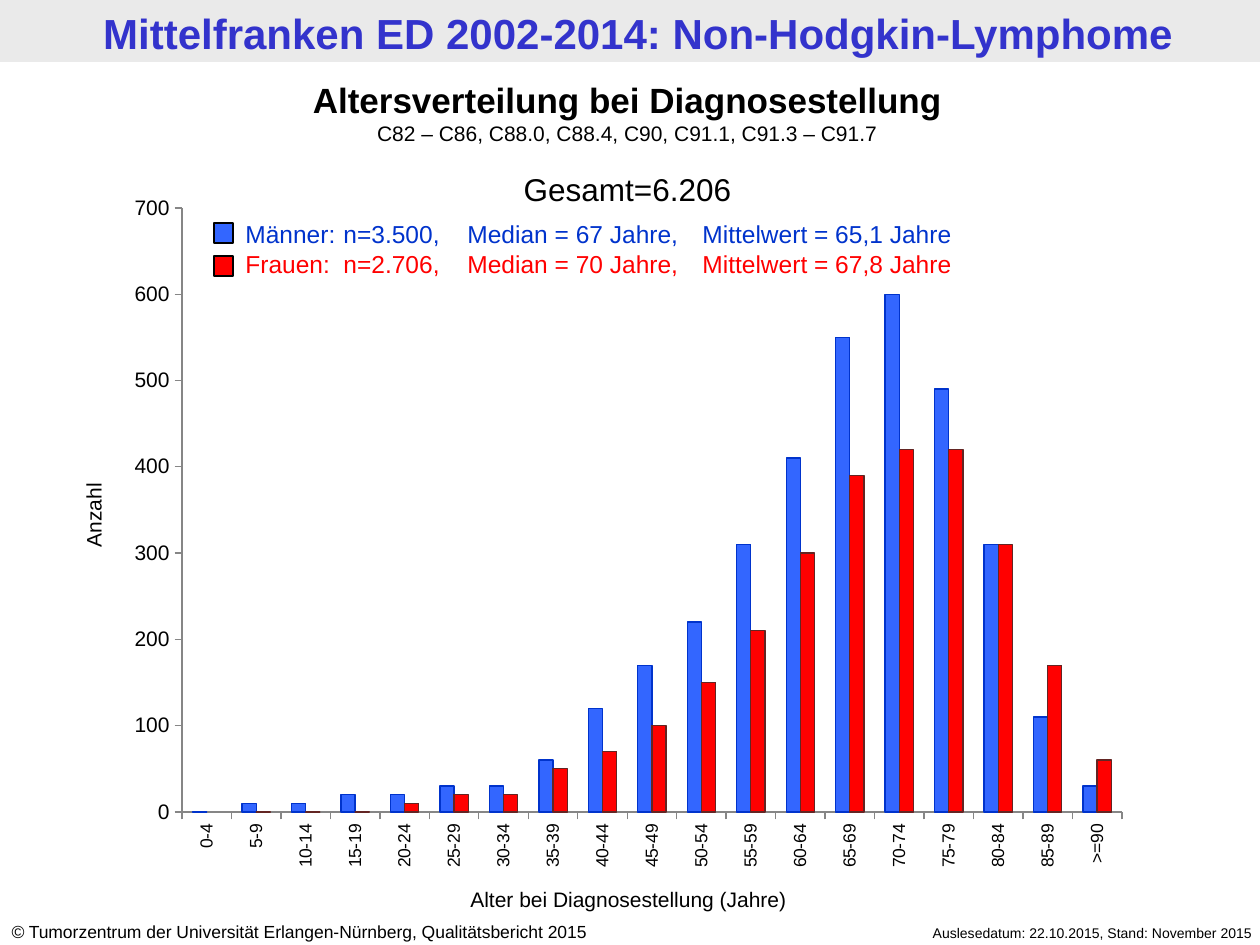
import pptx
import pptx.util
import pptx.dml.color
import pptx.chart.data
import pptx.enum.chart
import pptx.enum.shapes
import pptx.enum.text
import pptx.oxml
import pptx.oxml.ns
import lxml.etree

PX = 914400 / 126
ALIGN = pptx.enum.text.PP_ALIGN
Pt = pptx.util.Pt
qn = pptx.oxml.ns.qn


def rgb(value):
    return pptx.dml.color.RGBColor.from_string(value)


def add_text(sp, box, paras, align=ALIGN.LEFT, tabs=()):
    """Place a text shape; each paragraph is a list of (text, size, colour, bold, italic)."""
    sp.left, sp.top, sp.width, sp.height = [round(v * PX) for v in box]
    tf = sp.text_frame
    tf.word_wrap = True
    tf.auto_size = pptx.enum.text.MSO_AUTO_SIZE.NONE
    tf.vertical_anchor = pptx.enum.text.MSO_ANCHOR.TOP
    for i, runs in enumerate(paras):
        p = tf.paragraphs[0] if i == 0 else tf.add_paragraph()
        p.alignment = align
        if tabs:
            tab_list = lxml.etree.SubElement(p._p.get_or_add_pPr(), qn("a:tabLst"))
            for pos in tabs:
                lxml.etree.SubElement(tab_list, qn("a:tab"), pos=str(round(pos * PX)), algn="l")
        for text, size, colour, bold, italic in runs:
            r = p.add_run()
            r.text = text
            r.font.name = "Arial"
            r.font.size = Pt(size)
            r.font.bold = bold
            r.font.italic = italic
            r.font.color.rgb = rgb(colour)
    return tf


prs = pptx.Presentation()
prs.slide_width = round(1260 * PX)
prs.slide_height = round(945 * PX)
s = prs.slides.add_slide(prs.slide_layouts[5])
shapes = s.shapes

# Title band, moved behind the title
band = shapes.add_shape(pptx.enum.shapes.MSO_SHAPE.RECTANGLE, 0, 0, prs.slide_width, round(62 * PX))
band.shadow.inherit = False
band.fill.solid()
band.fill.fore_color.rgb = rgb("EAEAEA")
band.line.fill.background()
shapes._spTree.insert(2, band._element)

# Title
add_text(shapes.title, (8, 1, 1260, 62),
         [[("Mittelfranken ED 2002-2014: Non-Hodgkin-Lymphome", 24, "3333CC", True, False)]],
         ALIGN.CENTER)

# Footer
add_text(shapes.add_textbox(0, 0, 0, 0), (838, 918, 427, 30),
         [[("Auslesedatum: 22.10.2015, Stand: November 2015", 8, "000000", False, False)]],
         ALIGN.RIGHT)
add_text(shapes.add_textbox(0, 0, 0, 0), (-1, 915, 660, 34),
         [[("©", 10, "000000", False, True),
           (" Tumorzentrum der Universität Erlangen-Nürnberg, Qualitätsbericht 2015",
            10, "000000", False, False)]])

# Chart data: five-year age groups
data = pptx.chart.data.CategoryChartData()
data.categories = [f"{a}-{a + 4}" for a in range(0, 90, 5)] + [">=90"]
data.add_series("Männer", [0, 10, 10, 20, 20, 30, 30, 60, 120, 170, 220,
                           310, 410, 550, 600, 490, 310, 110, 30])
data.add_series("Frauen", [None, 0, 0, 0, 10, 20, 20, 50, 70, 100, 150,
                           210, 300, 390, 420, 420, 310, 170, 60])
chart = shapes.add_chart(pptx.enum.chart.XL_CHART_TYPE.COLUMN_CLUSTERED,
                         *[round(v * PX) for v in (115, 183, 1028, 699)], data).chart
chart.has_legend = False
chart.has_title = False
chart.font.name = "Calibri"
chart.font.size = Pt(18)
chart.font.color.rgb = rgb("000000")

# Columns
plot = chart.plots[0]
plot.gap_width = 150
plot.overlap = 0
plot.vary_by_categories = False
for series, fill, line in zip(plot.series, ("3366FF", "FF0000"), ("0033CC", "632523")):
    series.format.fill.solid()
    series.format.fill.fore_color.rgb = rgb(fill)
    series.format.line.color.rgb = rgb(line)
    series.format.line.width = Pt(0.75)

# Axes
for axis, size in ((chart.category_axis, 10), (chart.value_axis, 12)):
    axis.has_major_gridlines = False
    axis.major_tick_mark = pptx.enum.chart.XL_TICK_MARK.OUTSIDE
    axis.tick_labels.font.name = "Arial"
    axis.tick_labels.font.size = Pt(size)
    axis.tick_labels.font.color.rgb = rgb("000000")
    axis.format.line.color.rgb = rgb("868686")
    axis.format.line.width = Pt(0.75)
chart.value_axis.minimum_scale = 0
chart.value_axis.maximum_scale = 700
chart.value_axis.major_unit = 100
chart.category_axis._element.find(qn("c:txPr")).find(qn("a:bodyPr")).set("rot", "-5400000")

# Inner plot area as fractions of the chart
area = chart._chartSpace.chart.plotArea
layout = area.find(qn("c:layout"))
if layout is None:
    layout = lxml.etree.Element(qn("c:layout"))
    area.insert(0, layout)
manual = lxml.etree.SubElement(layout, qn("c:manualLayout"))
for tag, val in (("layoutTarget", "inner"), ("xMode", "edge"), ("yMode", "edge"),
                 ("x", 67 / 1028), ("y", 25 / 699), ("w", 940 / 1028), ("h", 604 / 699)):
    lxml.etree.SubElement(manual, qn("c:" + tag), val=str(val))

# Headings above the chart
tf = add_text(shapes.add_textbox(0, 0, 0, 0), (-5, 72, 1265, 144),
              [[("Altersverteilung bei Diagnosestellung", 20, "000000", True, False)],
               [("C82 – C86, C88.0, C88.4, C90, C91.1, C91.3 – C91.7", 12, "000000", False, False)],
               [("Gesamt=6.206", 18, "000000", False, False)]],
              ALIGN.CENTER)
tf.paragraphs[2].space_before = Pt(14)

# Legend text and keys
add_text(shapes.add_textbox(0, 0, 0, 0), (233, 213, 863, 72),
         [[("Männer: \tn=3.500, \tMedian = 67 Jahre, \tMittelwert = 65,1 Jahre",
            14, "0033CC", False, False)],
          [("Frauen: \tn=2.706, \tMedian = 70 Jahre,\tMittelwert = 67,8 Jahre",
            14, "FF0000", False, False)]],
         tabs=(98, 111, 222, 457))
for top, fill in ((223, "3366FF"), (256, "FF0000")):
    key = shapes.add_shape(pptx.enum.shapes.MSO_SHAPE.RECTANGLE,
                           *[round(v * PX) for v in (214, top, 19, 20)])
    key.shadow.inherit = False
    key.fill.solid()
    key.fill.fore_color.rgb = rgb(fill)
    key.line.color.rgb = rgb("000000")
    key.line.width = Pt(0.75)

# Axis titles
add_text(shapes.add_textbox(0, 0, 0, 0), (435, 880, 387, 38),
         [[("Alter bei Diagnosestellung (Jahre)", 12, "000000", False, False)]], ALIGN.CENTER)
sp = shapes.add_textbox(0, 0, 0, 0)
add_text(sp, (-71, 496, 329, 38), [[("Anzahl", 12, "000000", False, False)]], ALIGN.CENTER)
sp.rotation = 270

prs.save("out.pptx")
